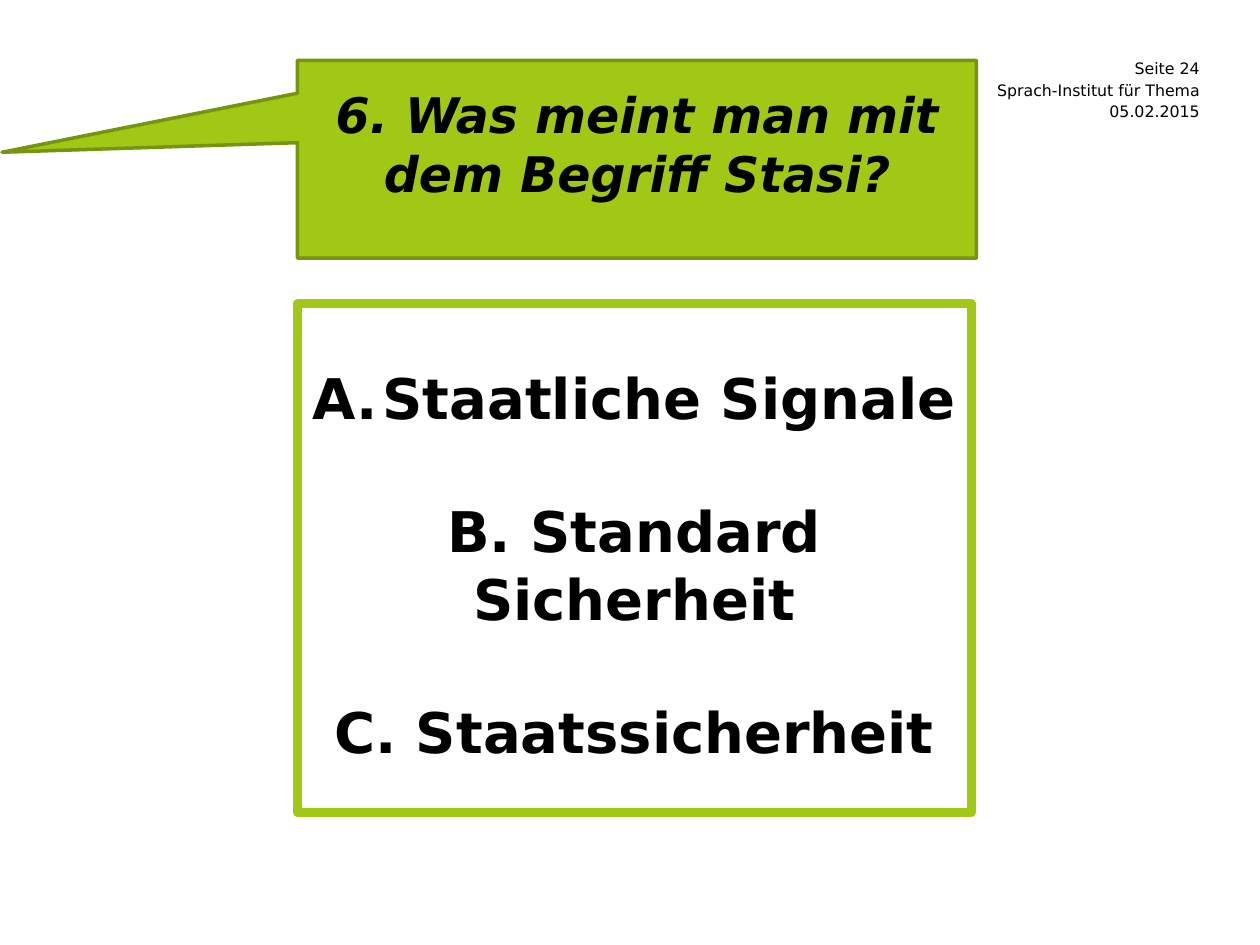
from collections import namedtuple
from dataclasses import dataclass

from lxml.etree import SubElement
from pptx import Presentation
from pptx.dml.color import RGBColor
from pptx.enum.shapes import MSO_SHAPE
from pptx.enum.text import MSO_ANCHOR, PP_ALIGN
from pptx.oxml.ns import qn
from pptx.util import Pt

Box = namedtuple("Box", "left top width height")


@dataclass(frozen=True)
class Theme:
    """Colours and type sizes of the quiz slide."""
    font: str = "DejaVu Sans"
    ink: RGBColor = RGBColor(0, 0, 0)
    green: RGBColor = RGBColor(0xA0, 0xC8, 0x14)
    dark_green: RGBColor = RGBColor(0x76, 0x94, 0x0F)
    small: int = 9
    question: int = 28
    answer: int = 32


THEME = Theme()


def prepare_frame(shape, anchor, insets):
    """Wrap the text of a shape and set its anchor and (side, top) insets."""
    frame = shape.text_frame
    side, top = insets
    frame.word_wrap = True
    frame.vertical_anchor = anchor
    frame.margin_left = frame.margin_right = Pt(side)
    frame.margin_top, frame.margin_bottom = Pt(top), Pt(0)
    return frame


def style_para(para, size, align, bold=False, italic=False):
    """Set alignment and font of a whole paragraph."""
    para.alignment = align
    font = para.font
    font.name, font.size = THEME.font, Pt(size)
    font.bold, font.italic = bold, italic
    font.color.rgb = THEME.ink


def number_para(para, indent):
    """Give a paragraph an automatic capital letter with a hanging indent."""
    properties = para._p.get_or_add_pPr()
    properties.set("marL", str(Pt(indent)))
    properties.set("indent", str(-Pt(indent)))
    SubElement(properties, qn("a:buFont"), typeface=THEME.font)
    SubElement(properties, qn("a:buAutoNum"), type="alphaUcPeriod")


def add_page_info(page, box, lines):
    """Stack right-aligned one-line labels at equal steps."""
    step = box.height / len(lines)
    for index, line in enumerate(lines):
        label = page.shapes.add_textbox(
            Pt(box.left), Pt(box.top + index * step), Pt(box.width), Pt(step))
        frame = prepare_frame(label, MSO_ANCHOR.MIDDLE, (0, 0))
        para = frame.paragraphs[0]
        para.text = line
        style_para(para, THEME.small, PP_ALIGN.RIGHT)


def add_question(page, box, question):
    """Place the question in a callout that points to the left edge."""
    callout = page.shapes.add_shape(
        MSO_SHAPE.RECTANGULAR_CALLOUT, *map(Pt, box))
    callout.adjustments[0], callout.adjustments[1] = -0.935, -0.035
    callout.shadow.inherit = False
    callout.fill.solid()
    callout.fill.fore_color.rgb = THEME.green
    callout.line.color.rgb = THEME.dark_green
    callout.line.width = Pt(2)
    para = prepare_frame(callout, MSO_ANCHOR.TOP, (7.2, 14)).paragraphs[0]
    para.text = question
    style_para(para, THEME.question, PP_ALIGN.CENTER, bold=True, italic=True)


def add_answers(page, box, answers):
    """Place the answers in a framed box, the first one numbered."""
    panel = page.shapes.add_shape(MSO_SHAPE.RECTANGLE, *map(Pt, box))
    panel.shadow.inherit = False
    panel.fill.background()
    panel.line.color.rgb = THEME.green
    panel.line.width = Pt(5)
    frame = prepare_frame(panel, MSO_ANCHOR.TOP, (7.2, 34))
    for index, answer in enumerate(answers):
        para = frame.add_paragraph() if index else frame.paragraphs[0]
        para.text = answer
        if index:
            para.space_before = Pt(38)
        else:
            number_para(para, 40)
        style_para(para, THEME.answer, PP_ALIGN.CENTER, bold=True)


def main():
    """Build and save the quiz slide."""
    deck = Presentation()
    deck.slide_width, deck.slide_height = Pt(720), Pt(540)
    page = deck.slides.add_slide(deck.slide_layouts[6])
    add_page_info(page, Box(527, 32.5, 158.5, 37.5),
                  ["Seite 24", "Sprach-Institut für Thema", "05.02.2015"])
    add_question(page, Box(170, 34.5, 388, 113),
                 "6. Was meint man mit dem Begriff Stasi?")
    add_answers(page, Box(170, 173.5, 385, 291),
                ["Staatliche Signale", "B. Standard Sicherheit",
                 "C. Staatssicherheit"])
    deck.save("out.pptx")


if __name__ == "__main__":
    main()
